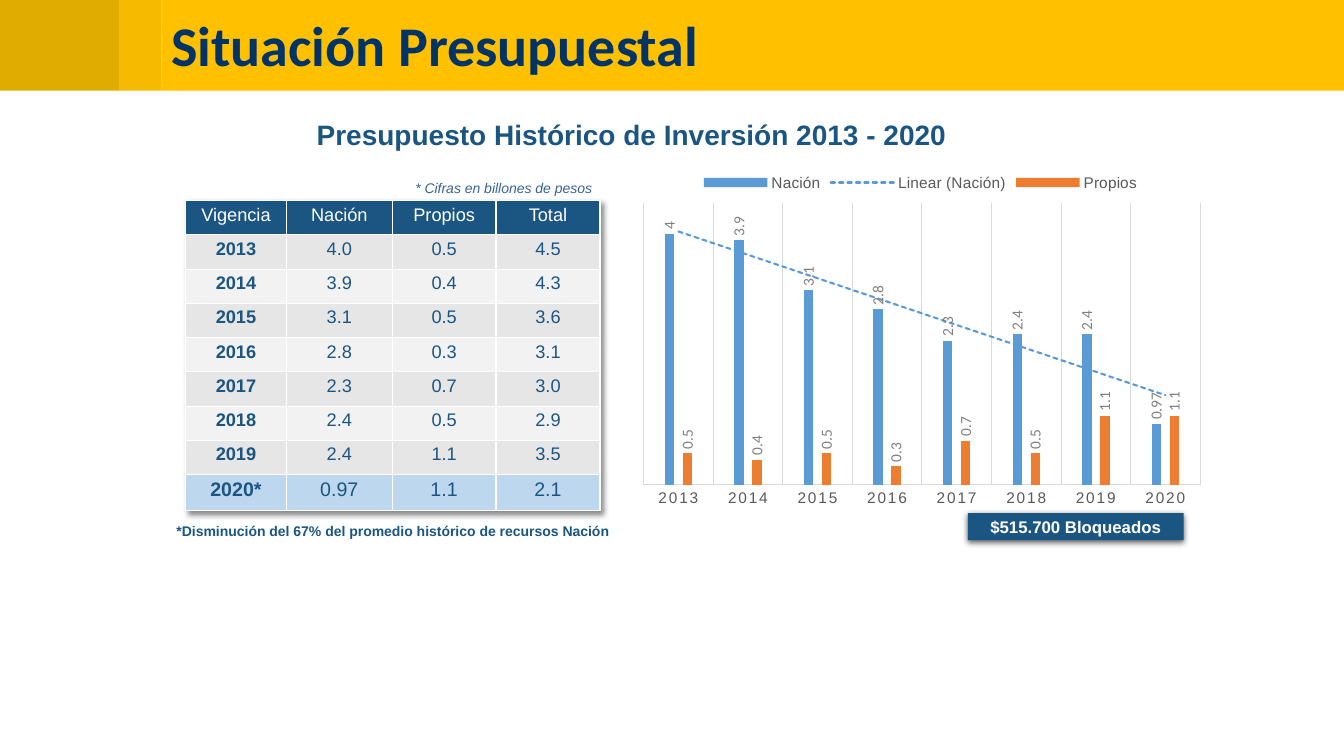
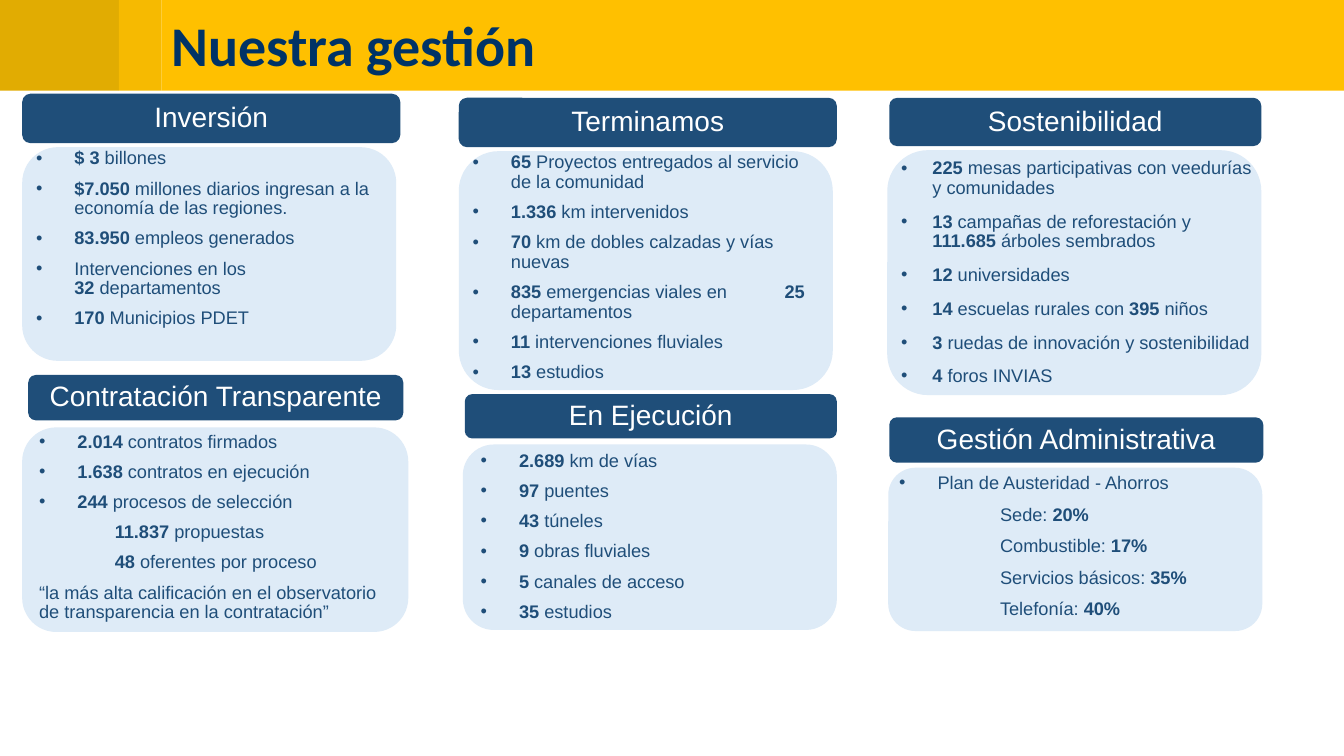
from lxml import etree
from pptx import Presentation
from pptx.chart.data import CategoryChartData
from pptx.dml.color import RGBColor
from pptx.enum.chart import XL_CHART_TYPE, XL_LABEL_POSITION, XL_LEGEND_POSITION, XL_TICK_MARK
from pptx.enum.shapes import MSO_SHAPE
from pptx.enum.text import MSO_ANCHOR, MSO_AUTO_SIZE, PP_ALIGN
from pptx.oxml import parse_xml
from pptx.oxml.ns import nsdecls, qn
from pptx.util import Inches, Pt

COLORS = {
    "gold": "FFC000", "dark_gold": "E1AC02", "mid_gold": "F6BA01", "title": "003366",
    "blue": "1B5582", "note": "386295", "white": "FFFFFF", "band_a": "E7E6E6",
    "band_b": "F2F2F2", "highlight": "BDD7EE", "header": "1F4E79", "panel": "DEEBF7",
    "nation": "5B9BD5", "own": "ED7D31", "grid": "D9D9D9", "axis": "595959",
    "label": "808080", "black": "000000",
}
BANDS = [(0, 1.18, "dark_gold"), (1.18, 0.42, "mid_gold"), (1.6, 11.73, "gold")]

TABLE_HEAD = ["Vigencia", "Nación", "Propios", "Total"]
BUDGET = [
    ("2013", "4.0", "0.5", "4.5"),
    ("2014", "3.9", "0.4", "4.3"),
    ("2015", "3.1", "0.5", "3.6"),
    ("2016", "2.8", "0.3", "3.1"),
    ("2017", "2.3", "0.7", "3.0"),
    ("2018", "2.4", "0.5", "2.9"),
    ("2019", "2.4", "1.1", "3.5"),
    ("2020*", "0.97", "1.1", "2.1"),
]
COLUMN_WIDTHS = [1, 1.05, 1.03, 1.03]
ROW_HEIGHTS = [0.34] * 8 + [0.36]

CARDS = [
    {"title": "Inversión", "head": (0.22, 0.93, 3.75, 0.49), "panel": (0.22, 1.46, 3.71, 2.12),
     "body": (0.26, 1.43, 3.67, 2.37),
     "lines": ["*$ 3* billones",
               "*$7.050* millones diarios ingresan a la economía de las regiones.",
               "*83.950* empleos generados",
               "Intervenciones en los\v*32* departamentos",
               "*170* Municipios PDET"]},
    {"title": "Contratación Transparente", "head": (0.28, 3.72, 3.72, 0.45),
     "panel": (0.22, 4.24, 3.83, 2.03), "body": (0.29, 4.24, 3.76, 1.97),
     "lines": ["*2.014* contratos firmados",
               "*1.638* contratos en ejecución",
               "*244* procesos de selección",
               (0.75, "*11.837* propuestas"),
               (0.75, "*48* oferentes por proceso"),
               (0, "“la más alta calificación en el observatorio de transparencia en la contratación”")]},
    {"title": "Terminamos", "head": (4.55, 0.97, 3.75, 0.49), "panel": (4.55, 1.5, 3.71, 2.37),
     "body": (4.59, 1.47, 3.67, 2.37), "tab": 3.25,
     "lines": ["*65* Proyectos entregados al servicio de la comunidad",
               "*1.336* km intervenidos",
               "*70* km de dobles calzadas y vías nuevas",
               "*835* emergencias viales en\t*25* departamentos",
               "*11* intervenciones fluviales",
               "*13* estudios"]},
    {"title": "En Ejecución", "head": (4.61, 3.91, 3.69, 0.44), "panel": (4.59, 4.41, 3.71, 1.84),
     "body": (4.67, 4.43, 3.63, 1.84),
     "lines": ["*2.689* km de vías",
               "*97* puentes",
               "*43* túneles",
               "*9* obras fluviales",
               "*5* canales de acceso",
               "*35* estudios"]},
    {"title": "Sostenibilidad", "head": (8.82, 0.97, 3.69, 0.48), "panel": (8.8, 1.49, 3.71, 2.43),
     "body": (8.84, 1.53, 3.67, 2.37), "hang": 0.31, "before": 10,
     "lines": ["*225* mesas participativas con veedurías y comunidades",
               "*13* campañas de reforestación y *111.685* árboles sembrados",
               "*12* universidades",
               "*14* escuelas rurales con *395* niños",
               "*3* ruedas de innovación y sostenibilidad",
               "*4* foros INVIAS"]},
    {"title": "Gestión Administrativa", "head": (8.82, 4.14, 3.71, 0.45),
     "panel": (8.81, 4.64, 3.71, 1.62), "body": (8.82, 4.67, 3.72, 1.59),
     "before": 10, "spacing": 0.8,
     "lines": ["Plan de Austeridad - Ahorros",
               (1, "Sede: *20%*"),
               (1, "Combustible: *17%*"),
               (1, "Servicios básicos: *35%*"),
               (1, "Telefonía: *40%*")]},
]


def rgb(name):
    return RGBColor.from_string(COLORS[name])


def inches(box):
    return [Inches(value) for value in box]


def style_font(font, size, color, name="Arial", bold=False, italic=False):
    font.size, font.name, font.bold, font.italic = Pt(size), name, bold, italic
    font.color.rgb = rgb(color)


def write(para, text, size=13, color="header", align=None, spacing=None, **font):
    para.alignment, para.line_spacing = align, spacing
    para.text = text
    for span in para.runs:
        style_font(span.font, size, color, **font)


def add_block(page, kind, box, color):
    block = page.shapes.add_shape(kind, *inches(box))
    block.shadow.inherit = False
    block.fill.solid()
    block.fill.fore_color.rgb = rgb(color)
    block.line.fill.background()
    block.text_frame.vertical_anchor = MSO_ANCHOR.MIDDLE
    return block


def add_text(page, box, text, wrap=True, margin=None, **format):
    frame = page.shapes.add_textbox(*inches(box)).text_frame
    frame.word_wrap = wrap
    if margin is not None:
        frame.margin_left = frame.margin_right = frame.margin_top = frame.margin_bottom = margin
    write(frame.paragraphs[0], text, **format)


def shadow_xml(blur, distance, angle, alpha):
    return parse_xml(
        f'<a:effectLst {nsdecls("a")}><a:outerShdw blurRad="{Pt(blur)}" dist="{Pt(distance)}" '
        f'dir="{angle * 60000}" algn="ctr" rotWithShape="0"><a:srgbClr val="{COLORS["black"]}">'
        f'<a:alpha val="{alpha * 1000}"/></a:srgbClr></a:outerShdw></a:effectLst>')


def add_page(deck, title):
    page = deck.slides.add_slide(deck.slide_layouts[5])
    holder = page.shapes.title
    holder.left, holder.top, holder.width, holder.height = inches((1.6, 0.03, 11.09, 0.91))
    frame = holder.text_frame
    frame.vertical_anchor, frame.auto_size = MSO_ANCHOR.MIDDLE, MSO_AUTO_SIZE.NONE
    write(frame.paragraphs[0], title, size=40, color="title", name="Calibri", bold=True,
          align=PP_ALIGN.LEFT, spacing=0.9)
    return page


def move_bands_to_layout(page):
    tree = page.slide_layout.shapes.element
    for index, (left, width, color) in enumerate(BANDS):
        band = add_block(page, MSO_SHAPE.RECTANGLE, (left, -0.01, width, 0.91), color)
        band.element.xpath(".//p:cNvPr")[0].set("id", str(100 + index))
        tree.insert(2 + index, band.element)


def add_budget_table(page):
    rows = [TABLE_HEAD] + BUDGET
    frame = page.shapes.add_table(len(rows), len(TABLE_HEAD), *inches((1.84, 1.99, 4.1, 3.1)))
    table = frame.table
    for column, width in zip(table.columns, COLUMN_WIDTHS):
        column.width = Inches(width)
    for row, height in zip(table.rows, ROW_HEIGHTS):
        row.height = Inches(height)
    for r, values in enumerate(rows):
        last = r == len(rows) - 1
        fill = "blue" if r == 0 else "highlight" if last else "band_a" if r % 2 else "band_b"
        for c, value in enumerate(values):
            cell = table.cell(r, c)
            cell.margin_left = cell.margin_right = Inches(0.04)
            cell.margin_top = cell.margin_bottom = Inches(0.04)
            cell.fill.solid()
            cell.fill.fore_color.rgb = rgb(fill)
            write(cell.text_frame.paragraphs[0], value, size=14 if last else 13,
                  color="blue" if r else "white", bold=r > 0 and c == 0, align=PP_ALIGN.CENTER)
    frame.element.xpath(".//a:tblPr")[0].insert(0, shadow_xml(4, 3, 45, 45))


def add_budget_chart(page):
    data = CategoryChartData()
    data.categories = [row[0].strip("*") for row in BUDGET]
    for index in (1, 2):
        data.add_series(TABLE_HEAD[index], [float(row[index]) for row in BUDGET])
    chart = page.shapes.add_chart(XL_CHART_TYPE.COLUMN_CLUSTERED,
                                  *inches((6.27, 1.61, 5.72, 3.48)), data).chart
    style_font(chart.font, 10, "black", name="Calibri")
    chart.has_title = False
    chart.has_legend = True
    chart.legend.position = XL_LEGEND_POSITION.TOP
    chart.legend.include_in_layout = False
    style_font(chart.legend.font, 11, "axis")

    years, values = chart.category_axis, chart.value_axis
    years.major_tick_mark = XL_TICK_MARK.NONE
    years.has_major_gridlines = True
    style_font(years.tick_labels.font, 11, "axis")
    for line in (years.format.line, years.major_gridlines.format.line):
        line.color.rgb, line.width = rgb("grid"), Pt(0.75)
    values.visible = values.has_major_gridlines = False
    values.minimum_scale, values.maximum_scale = 0, 4.5

    plot = chart.plots[0]
    plot.gap_width, plot.overlap, plot.vary_by_categories = 444, -90, False
    for series, color in zip(plot.series, ("nation", "own")):
        series.format.fill.solid()
        series.format.fill.fore_color.rgb = rgb(color)
        labels = series.data_labels
        labels.show_value, labels.position = True, XL_LABEL_POSITION.OUTSIDE_END
        style_font(labels.font, 11, "label", name="Calibri")

    space = chart.element
    for body in space.xpath(".//c:dLbls/c:txPr/a:bodyPr"):
        body.set("rot", "-5400000")
        body.set("vert", "horz")
    space.xpath(".//c:catAx/c:txPr//a:defRPr")[0].set("spc", "120")
    space.xpath(".//c:ser[1]/c:cat")[0].addprevious(parse_xml(
        f'<c:trendline {nsdecls("c", "a")}><c:name>Linear (Nación)</c:name>'
        f'<c:spPr><a:ln w="{Pt(1.5)}" cap="rnd"><a:solidFill><a:srgbClr val="{COLORS["nation"]}"/>'
        '</a:solidFill><a:prstDash val="sysDash"/></a:ln></c:spPr>'
        '<c:trendlineType val="linear"/><c:dispRSqr val="0"/><c:dispEq val="0"/></c:trendline>'))
    area = space.xpath(".//c:plotArea")[0]
    for layout in area.findall(qn("c:layout")):
        area.remove(layout)
    area.insert(0, parse_xml(
        f'<c:layout {nsdecls("c")}><c:manualLayout><c:layoutTarget val="inner"/>'
        '<c:xMode val="edge"/><c:yMode val="edge"/><c:x val="0.02"/><c:y val="0.115"/>'
        '<c:w val="0.965"/><c:h val="0.805"/></c:manualLayout></c:layout>'))


def add_card(page, card):
    add_block(page, MSO_SHAPE.ROUNDED_RECTANGLE, card["panel"], "panel")
    head = add_block(page, MSO_SHAPE.ROUNDED_RECTANGLE, card["head"], "header")
    write(head.text_frame.paragraphs[0], card["title"], size=20, color="white",
          align=PP_ALIGN.CENTER, spacing=0.9)
    frame = page.shapes.add_textbox(*inches(card["body"])).text_frame
    frame.word_wrap = True
    for index, line in enumerate(card["lines"]):
        para = frame.add_paragraph() if index else frame.paragraphs[0]
        bulleted = isinstance(line, str)
        indent, text = (card.get("hang", 0.38), line) if bulleted else line
        settings = para._p.get_or_add_pPr()
        settings.set("marL", str(Inches(indent)))
        settings.set("indent", str(-Inches(indent) if bulleted else 0))
        if bulleted:
            etree.SubElement(settings, qn("a:buFont")).set("typeface", "Arial")
            etree.SubElement(settings, qn("a:buChar")).set("char", "•")
        if "\t" in text:
            tabs = etree.SubElement(settings, qn("a:tabLst"))
            etree.SubElement(tabs, qn("a:tab"), pos=str(Inches(card["tab"])), algn="l")
        para.line_spacing = card.get("spacing", 0.9)
        para.space_before = Pt(card.get("before", 7.5) if index else 0)
        style_font(para.font, 13, "header")
        for part, piece in enumerate(text.split("*")):
            for row, words in enumerate(piece.split("\v")):
                if row:
                    para.add_line_break()
                if words:
                    span = para.add_run()
                    span.text = words
                    style_font(span.font, 13, "header", bold=part % 2 == 1)


def main():
    deck = Presentation()
    deck.slide_width, deck.slide_height = Inches(13.33), Inches(7.5)

    page = add_page(deck, "Situación Presupuestal")
    move_bands_to_layout(page)
    add_text(page, (3.11, 1.2, 6.31, 0.31), "Presupuesto Histórico de Inversión 2013 - 2020",
             margin=0, size=20, color="blue", bold=True, align=PP_ALIGN.CENTER, spacing=Pt(21.8))
    add_text(page, (3.86, 1.73, 2.11, 0.27), "* Cifras en billones de pesos",
             size=10, color="note", italic=True, align=PP_ALIGN.RIGHT)
    add_budget_table(page)
    add_text(page, (1.63, 5.13, 4.53, 0.27),
             "*Disminución del 67% del promedio histórico de recursos Nación",
             wrap=False, size=10, color="blue", bold=True, align=PP_ALIGN.CENTER)
    add_budget_chart(page)
    blocked = add_block(page, MSO_SHAPE.RECTANGLE, (9.6, 5.09, 2.14, 0.27), "blue")
    write(blocked.text_frame.paragraphs[0], "$515.700 Bloqueados", size=12, color="white",
          bold=True, align=PP_ALIGN.CENTER)
    effects = blocked.element.xpath("./p:spPr/a:effectLst")[0]
    effects.getparent().replace(effects, shadow_xml(4.5, 1.5, 90, 63))

    page = add_page(deck, "Nuestra gestión")
    for card in CARDS:
        add_card(page, card)

    deck.save("out.pptx")


if __name__ == "__main__":
    main()
